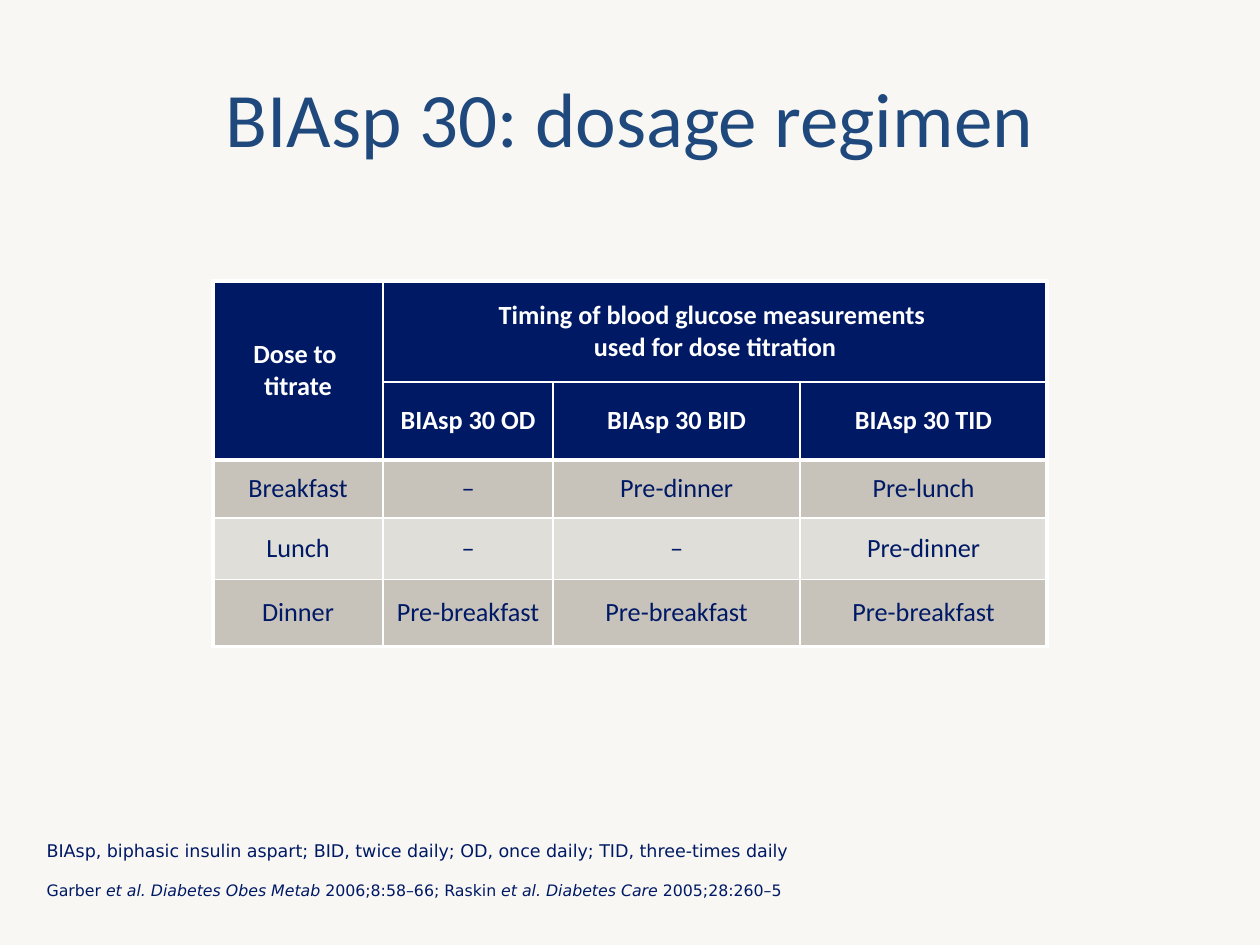
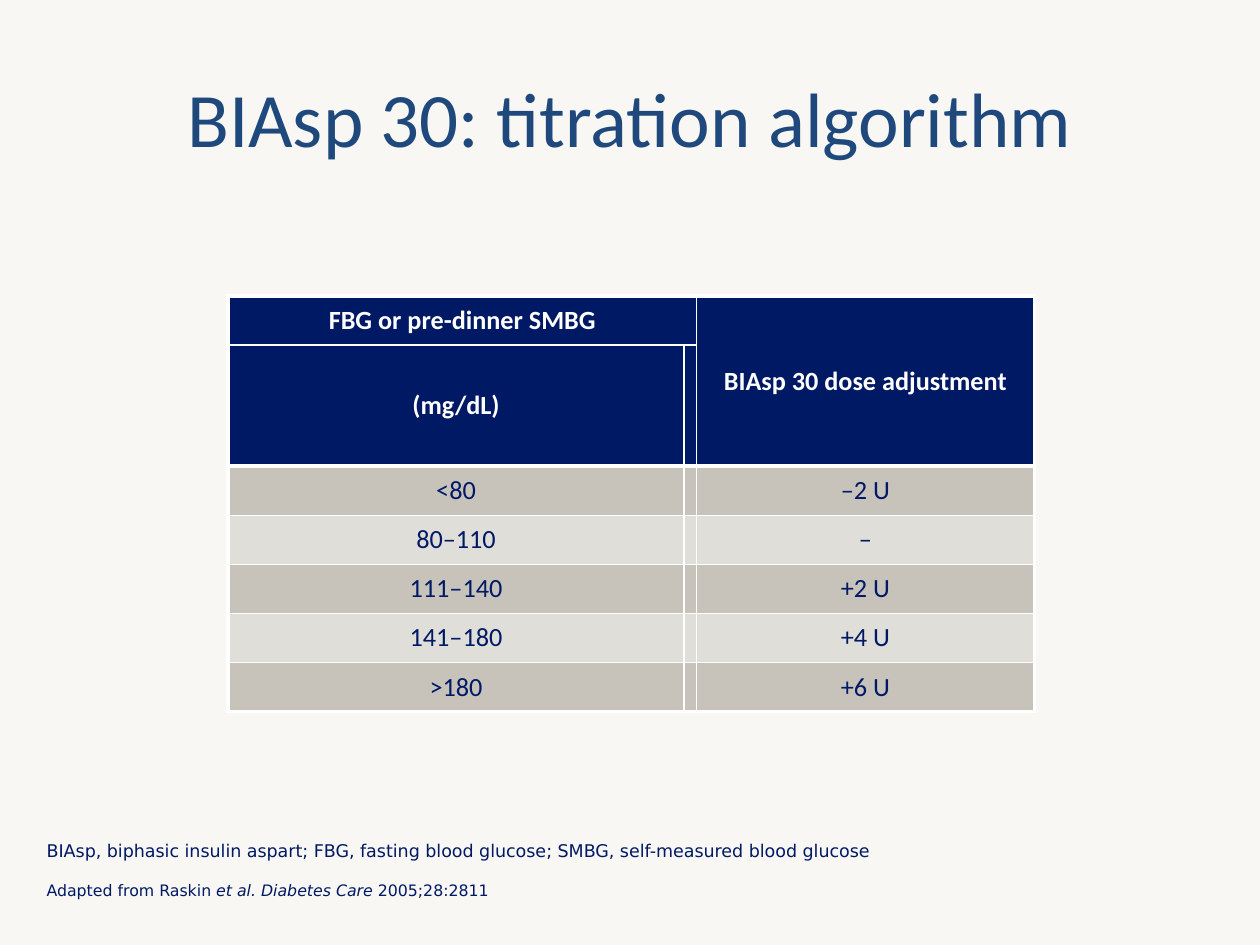
from lxml.etree import SubElement
from pptx import Presentation
from pptx.dml.color import RGBColor
from pptx.enum.text import MSO_ANCHOR, MSO_AUTO_SIZE, PP_ALIGN
from pptx.oxml.ns import qn
from pptx.util import Inches, Pt

BACKGROUND = RGBColor(0xF8, 0xF7, 0xF3)
TITLE_BLUE = RGBColor(0x1F, 0x49, 0x7D)
NAVY = RGBColor(0x00, 0x19, 0x65)
WHITE = RGBColor(0xFF, 0xFF, 0xFF)
DARK_BAND = RGBColor(0xC7, 0xC2, 0xBA)
LIGHT_BAND = RGBColor(0xE0, 0xDE, 0xD8)
TABLE_FONT = "Calibri"
NOTE_FONT = "DejaVu Sans"
THIN, THICK = Pt(1), Pt(2.25)
HEADER_ROWS = 2
TITLE_ONLY = 5


def style_font(font, name, size, color, bold=False, italic=False):
    """Set the typeface, size, colour and emphasis of a font."""
    font.name = name
    font.size = Pt(size)
    font.color.rgb = color
    font.bold = bold
    font.italic = italic


def add_titled_slide(presentation, title):
    """Add a title-only slide and format its title."""
    slide = presentation.slides.add_slide(presentation.slide_layouts[TITLE_ONLY])
    shape = slide.shapes.title
    shape.left, shape.top = Inches(0.5), Inches(0.3)
    shape.width, shape.height = Inches(9), Inches(1.25)
    text_frame = shape.text_frame
    text_frame.text = title
    text_frame.vertical_anchor = MSO_ANCHOR.MIDDLE
    paragraph = text_frame.paragraphs[0]
    paragraph.alignment = PP_ALIGN.CENTER
    style_font(paragraph.runs[0].font, TABLE_FONT, 44, TITLE_BLUE)
    return slide


def add_note(slide, top, width, height, size, anchor, parts):
    """Add a note line whose parts alternate between plain and italic."""
    shape = slide.shapes.add_textbox(Inches(0.24), Inches(top), Inches(width), Inches(height))
    text_frame = shape.text_frame
    text_frame.word_wrap = True
    text_frame.auto_size = MSO_AUTO_SIZE.SHAPE_TO_FIT_TEXT
    text_frame.vertical_anchor = anchor
    text_frame.margin_left = text_frame.margin_right = Inches(0.13)
    text_frame.margin_top = text_frame.margin_bottom = Inches(0.07)
    for index, part in enumerate(parts):
        run = text_frame.paragraphs[0].add_run()
        run.text = part
        style_font(run.font, NOTE_FONT, size, NAVY, italic=index % 2 == 1)


def add_footnotes(slide, abbreviations, citation):
    """Add the abbreviation line and the citation line below the table."""
    add_note(slide, 6.92, 6.93, 0.29, 9, MSO_ANCHOR.BOTTOM, citation)
    add_note(slide, 6.6, 8.89, 0.3, 10, MSO_ANCHOR.TOP, [abbreviations])


def draw_border(cell, side, width):
    """Draw one white border of a cell."""
    properties = cell._tc.get_or_add_tcPr()
    line = SubElement(properties, qn(f"a:ln{side}"), w=str(width))
    fill = SubElement(line, qn("a:solidFill"))
    SubElement(fill, qn("a:srgbClr"), val=str(WHITE))


def style_cell(cell, row, column, row_count, column_count):
    """Format a cell, with thick borders around the table and under its header."""
    row_edges = (0, HEADER_ROWS, row_count)
    column_edges = (0, column_count)
    thick_sides = {
        "L": column in column_edges,
        "R": column + cell.span_width in column_edges,
        "T": row in row_edges,
        "B": row + cell.span_height in row_edges,
    }
    for side, is_thick in thick_sides.items():
        draw_border(cell, side, THICK if is_thick else THIN)
    is_header = row < HEADER_ROWS
    band = LIGHT_BAND if (row - HEADER_ROWS) % 2 else DARK_BAND
    cell.fill.solid()
    cell.fill.fore_color.rgb = NAVY if is_header else band
    cell.vertical_anchor = MSO_ANCHOR.MIDDLE
    cell.margin_left = cell.margin_right = Inches(0.03)
    cell.margin_top = cell.margin_bottom = Inches(0.03)
    for paragraph in cell.text_frame.paragraphs:
        paragraph.alignment = PP_ALIGN.CENTER
        for run in paragraph.runs:
            style_font(run.font, TABLE_FONT, 15, WHITE if is_header else NAVY, bold=is_header)


def add_dose_table(slide, left, top, column_widths, row_heights, merges, rows):
    """Add a banded table with a two-row header and merged header cells."""
    row_count, column_count = len(row_heights), len(column_widths)
    table = slide.shapes.add_table(
        row_count, column_count, Inches(left), Inches(top),
        Inches(sum(column_widths)), Inches(sum(row_heights))).table
    for column, width in zip(table.columns, column_widths):
        column.width = Inches(width)
    for row, height in zip(table.rows, row_heights):
        row.height = Inches(height)
    for first, last in merges:
        table.cell(*first).merge(table.cell(*last))
    for row, texts in enumerate(rows):
        for column, text in enumerate(texts):
            cell = table.cell(row, column)
            if cell.is_spanned:
                continue
            if text:
                cell.text_frame.paragraphs[0].text = text
            style_cell(cell, row, column, row_count, column_count)


def add_dosage_slide(presentation):
    """Build the slide on the dosage regimen."""
    slide = add_titled_slide(presentation, "BIAsp 30: dosage regimen")
    add_dose_table(
        slide, 1.69, 2.23, [1.35, 1.35, 1.96, 1.96], [0.8, 0.62, 0.46, 0.49, 0.53],
        [((0, 0), (1, 0)), ((0, 1), (0, 3))],
        [
            ["Dose to \vtitrate",
             "Timing of blood glucose measurements \vused for dose titration", "", ""],
            ["", "BIAsp 30 OD", "BIAsp 30 BID", "BIAsp 30 TID"],
            ["Breakfast", "–", "Pre-dinner", "Pre-lunch"],
            ["Lunch", "–", "–", "Pre-dinner"],
            ["Dinner"] + ["Pre-breakfast"] * 3,
        ])
    add_footnotes(
        slide,
        "BIAsp, biphasic insulin aspart; BID, twice daily; OD, once daily; TID, three-times daily",
        ["Garber ", "et al. Diabetes Obes Metab", " 2006;8:58–66; Raskin ",
         "et al. Diabetes Care", " 2005;28:260–5"])


def add_titration_slide(presentation):
    """Build the slide on the titration algorithm."""
    slide = add_titled_slide(presentation, "BIAsp 30: titration algorithm")
    adjustments = [("<80", "–2 U"), ("80–110", "–"), ("111–140", "+2 U"),
                   ("141–180", "+4 U"), (">180", "+6 U")]
    add_dose_table(
        slide, 1.81, 2.35, [3.62, 0.09, 2.68], [0.39, 0.96] + [0.39] * len(adjustments),
        [((0, 0), (0, 1)), ((0, 2), (1, 2))],
        [
            ["FBG or pre-dinner SMBG", "", "BIAsp 30 dose adjustment"],
            ["(mg/dL)", "", ""],
            *[[glucose, "", dose] for glucose, dose in adjustments],
        ])
    add_footnotes(
        slide,
        "BIAsp, biphasic insulin aspart; FBG, fasting blood glucose; "
        "SMBG, self-measured blood glucose",
        ["Adapted from Raskin ", "et al. Diabetes Care", " 2005;28:2811"])


def main():
    """Build and save the presentation."""
    presentation = Presentation()
    presentation.slide_width, presentation.slide_height = Inches(10), Inches(7.5)
    background = presentation.slide_master.background.fill
    background.solid()
    background.fore_color.rgb = BACKGROUND
    add_dosage_slide(presentation)
    add_titration_slide(presentation)
    presentation.save("out.pptx")


if __name__ == "__main__":
    main()
